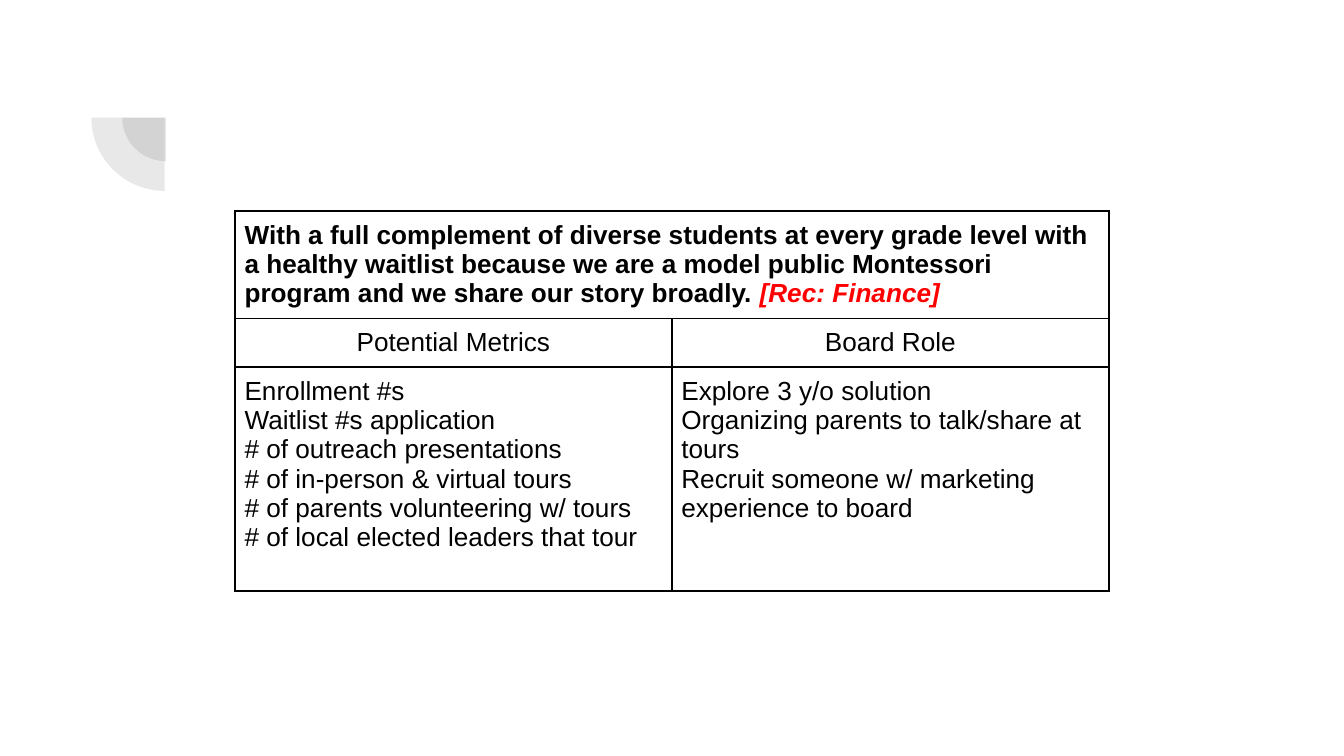
from lxml import etree
from pptx import Presentation
from pptx.dml.color import RGBColor
from pptx.enum.shapes import MSO_SHAPE
from pptx.enum.text import PP_ALIGN
from pptx.oxml.ns import qn
from pptx.util import Inches, Pt

BLACK = RGBColor(0x00, 0x00, 0x00)
RED = RGBColor(0xFF, 0x00, 0x00)
GRAY = RGBColor(0x42, 0x42, 0x42)
PIE = MSO_SHAPE.PIE
LEFT = PP_ALIGN.LEFT
CENTER = PP_ALIGN.CENTER
BLANK_LAYOUT = 6

GOAL = (
    "With a full complement of diverse students at every grade level with a healthy "
    "waitlist because we are a model public Montessori program and we share our story broadly. "
)
METRICS = [
    "Enrollment #s",
    "Waitlist #s application",
    "# of outreach presentations",
    "# of in-person & virtual tours",
    "# of parents volunteering w/ tours",
    "# of local elected leaders that tour",
]
BOARD_ROLES = [
    "Explore 3 y/o solution",
    "Organizing parents to talk/share at tours",
    "Recruit someone w/ marketing experience to board",
]
ROW_HEIGHTS = [0.8, 0.36, 1.67]


def add_quarter(slide, left, top, diameter):
    """Add a translucent quarter disc."""
    quarter = slide.shapes.add_shape(
        PIE, Inches(left), Inches(top), Inches(diameter), Inches(diameter)
    )
    quarter.adjustments[0] = 108
    quarter.adjustments[1] = 162
    quarter.rotation = 270
    quarter.shadow.inherit = False
    quarter.line.fill.background()
    quarter.fill.solid()
    quarter.fill.fore_color.rgb = GRAY
    color = quarter.fill._xPr.find(qn("a:solidFill"))[0]
    etree.SubElement(color, qn("a:alpha"), val="12000")


def add_span(para, text, color=BLACK, bold=False, italic=False):
    """Add formatted text to a paragraph."""
    span = para.add_run()
    span.text = text
    span.font.name = "Arial"
    span.font.size = Pt(14)
    span.font.color.rgb = color
    span.font.bold = bold
    span.font.italic = italic


def fill_cell(cell, lines, align=LEFT):
    """Write one paragraph per line into a cell."""
    frame = cell.text_frame
    for index, line in enumerate(lines):
        para = frame.add_paragraph() if index else frame.paragraphs[0]
        para.alignment = align
        add_span(para, line)


def style_cell(cell):
    """Give a cell black borders, even margins and no fill."""
    cell.margin_left = cell.margin_right = Inches(0.07)
    cell.margin_top = cell.margin_bottom = Inches(0.07)
    properties = cell._tc.get_or_add_tcPr()
    for side in ("lnL", "lnR", "lnT", "lnB"):
        border = etree.SubElement(properties, qn(f"a:{side}"), w=str(Pt(1)))
        fill = etree.SubElement(border, qn("a:solidFill"))
        etree.SubElement(fill, qn("a:srgbClr"), val=str(BLACK))
    cell.fill.background()


def add_goal_table(slide):
    """Add the table of the goal, its metrics and the board role."""
    table = slide.shapes.add_table(
        3, 2, Inches(1.75), Inches(1.57), Inches(6.5), Inches(sum(ROW_HEIGHTS))
    ).table
    table.first_row = False
    table.horz_banding = False
    for row, height in zip(table.rows, ROW_HEIGHTS):
        row.height = Inches(height)
    for cell in table.iter_cells():
        style_cell(cell)

    goal_cell = table.cell(0, 0)
    goal_cell.merge(table.cell(0, 1))
    para = goal_cell.text_frame.paragraphs[0]
    add_span(para, GOAL, bold=True)
    add_span(para, "[Rec: Finance]", color=RED, bold=True, italic=True)

    columns = [("Potential Metrics", METRICS), ("Board Role", BOARD_ROLES)]
    for index, (heading, lines) in enumerate(columns):
        fill_cell(table.cell(1, index), [heading], align=CENTER)
        fill_cell(table.cell(2, index), lines)


def main():
    """Build and save the deck."""
    deck = Presentation()
    deck.slide_width = Inches(10)
    deck.slide_height = Inches(10) * 9 // 16
    slide = deck.slides.add_slide(deck.slide_layouts[BLANK_LAYOUT])
    add_quarter(slide, 0.91, 0.55, 0.65)
    add_quarter(slide, 0.68, 0.33, 1.09)
    add_goal_table(slide)
    deck.save("out.pptx")


if __name__ == "__main__":
    main()
